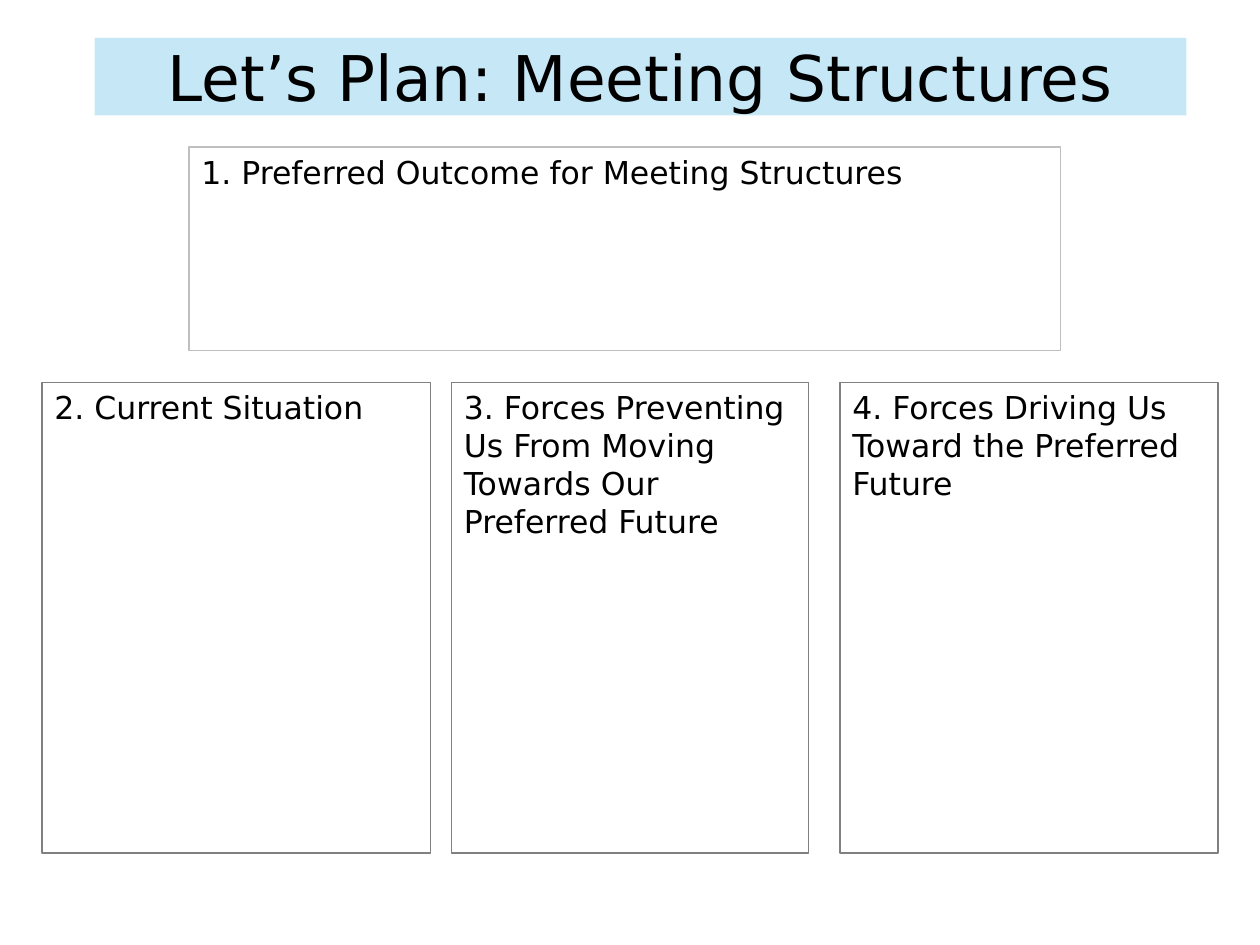
from lxml.etree import SubElement
from pptx import Presentation
from pptx.dml.color import RGBColor
from pptx.enum.text import MSO_ANCHOR as Anchor, MSO_AUTO_SIZE as Fit, PP_ALIGN as Align
from pptx.oxml.ns import qn
from pptx.util import Pt


def color(code):
    return RGBColor.from_string(code)


def write(frame, text, size, align, anchor):
    frame.word_wrap = True
    frame.auto_size = Fit.NONE
    frame.vertical_anchor = anchor
    para = frame.paragraphs[0]
    para.alignment = align
    run = para.add_run()
    run.text = text
    run.font.name = "DejaVu Sans"
    run.font.size = Pt(size)
    run.font.color.rgb = color("000000")


prs = Presentation()
prs.slide_width, prs.slide_height = Pt(720), Pt(540)
slide = prs.slides.add_slide(prs.slide_layouts[5])

# Title band
title = slide.shapes.title
title.left, title.top, title.width, title.height = Pt(54), Pt(21.6), Pt(624), Pt(44.4)
title.fill.solid()
title.fill.fore_color.rgb = color("AADDF3")
tint = title.fill._xPr.find(qn("a:solidFill"))[0]
SubElement(tint, qn("a:alpha")).set("val", "68000")
write(title.text_frame, "Let’s Plan: Meeting Structures", 36, Align.CENTER, Anchor.MIDDLE)

# Planning boxes: the outcome above, three columns below
TOP, HIGH = 218.4, 269
boxes = [
    ("1. Preferred Outcome for Meeting Structures", 108, 84, 498, 116.5, "BFBFBF"),
    ("2. Current Situation", 24, TOP, 222, HIGH, "808080"),
    ("3. Forces Preventing Us From Moving Towards Our Preferred Future",
     258, TOP, 204, HIGH, "808080"),
    ("4. Forces Driving Us Toward the Preferred Future", 480, TOP, 216, HIGH, "808080"),
]
for text, left, top, width, height, edge in boxes:
    box = slide.shapes.add_textbox(Pt(left), Pt(top), Pt(width), Pt(height))
    box.line.color.rgb = color(edge)
    box.line.width = Pt(0.75)
    write(box.text_frame, text, 18, Align.LEFT, Anchor.TOP)

prs.save("out.pptx")
